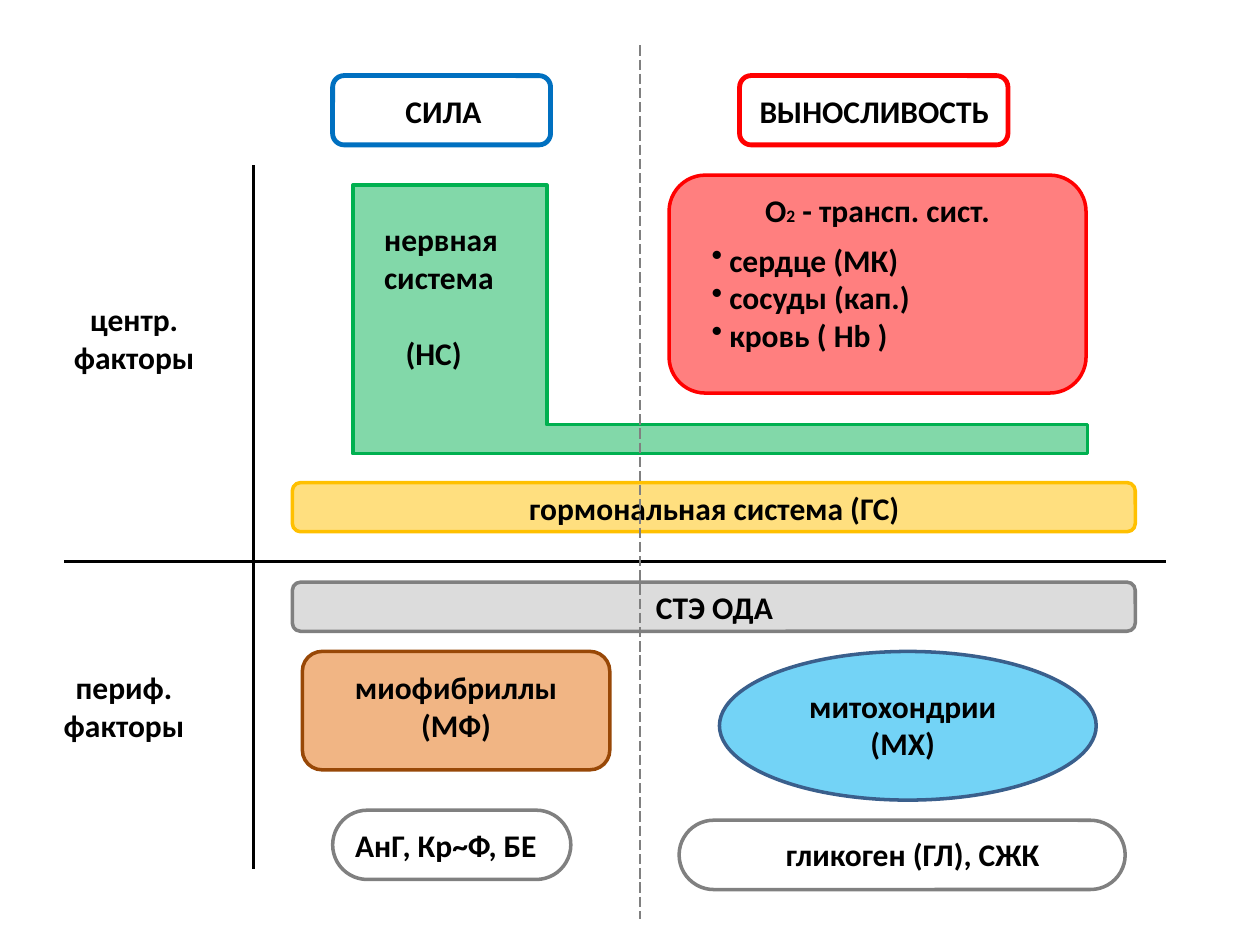
from dataclasses import dataclass

from lxml import etree
from pptx import Presentation
from pptx.dml.color import RGBColor
from pptx.enum.dml import MSO_LINE
from pptx.enum.shapes import MSO_CONNECTOR, MSO_SHAPE
from pptx.enum.text import MSO_AUTO_SIZE, PP_ALIGN
from pptx.oxml.ns import qn
from pptx.util import Inches, Pt

ROUNDED = MSO_SHAPE.ROUNDED_RECTANGLE
OVAL = MSO_SHAPE.OVAL
STRAIGHT = MSO_CONNECTOR.STRAIGHT
LEFT, CENTER = PP_ALIGN.LEFT, PP_ALIGN.CENTER
LONG_DASH = MSO_LINE.LONG_DASH
FIT_TEXT = MSO_AUTO_SIZE.SHAPE_TO_FIT_TEXT

COLUMNS, ROWS = 100, 75
WIDTH, HEIGHT = Inches(10), Inches(7.5)


@dataclass(frozen=True)
class Theme:
    font: str = "Calibri"
    body: float = 18
    subscript: float = 10
    line_height: float = 22
    heading_line: float = 2.75
    outline: float = 2
    axis: float = 1.75
    divider: float = 0.75
    black: str = "000000"
    blue: str = "0070C0"
    red: str = "FF0000"
    green: str = "00B050"
    amber: str = "FFC000"
    silver: str = "BFBFBF"
    gray: str = "808080"
    orange: str = "E46C0A"
    brown: str = "984807"
    sky: str = "00B0F0"
    navy: str = "3A5F8C"


class SlideBuilder:
    """Draws on one slide; lengths are columns and rows of the grid."""

    def __init__(self, page, theme):
        self.page = page
        self.theme = theme

    def x(self, columns):
        return round(WIDTH * columns / COLUMNS)

    def y(self, rows):
        return round(HEIGHT * rows / ROWS)

    def area(self, left, top, width, height):
        return self.x(left), self.y(top), self.x(width), self.y(height)

    def shape(self, kind, at, outline, weight=None, fill=None, alpha=50, adjust=()):
        shape = self.page.shapes.add_shape(kind, *self.area(*at))
        for index, value in enumerate(adjust):
            shape.adjustments[index] = value
        self.paint(shape, outline, weight, fill, alpha)

    def corner(self, at, post, foot, outline, fill, alpha):
        """An L outline: post is the upright's width, foot the base's height."""
        left, top, width, height = at
        right, bottom = left + width, top + height
        points = [(left + post, top), (left + post, bottom - foot),
                  (right, bottom - foot), (right, bottom), (left, bottom)]
        outliner = self.page.shapes.build_freeform(self.x(left), self.y(top))
        outliner.add_line_segments([(self.x(x), self.y(y)) for x, y in points])
        self.paint(outliner.convert_to_shape(), outline, None, fill, alpha)

    def paint(self, shape, outline, weight, fill, alpha):
        shape.shadow.inherit = False
        shape.line.color.rgb = RGBColor.from_string(outline)
        shape.line.width = Pt(weight or self.theme.outline)
        if fill is None:
            shape.fill.background()
            return
        shape.fill.solid()
        shape.fill.fore_color.rgb = RGBColor.from_string(fill)
        color = shape._element.spPr.find(qn("a:solidFill"))[0]
        etree.SubElement(color, qn("a:alpha"), val=str(alpha * 1000))

    def line(self, start, end, color, weight, dash=None):
        line = self.page.shapes.add_connector(
            STRAIGHT, self.x(start[0]), self.y(start[1]), self.x(end[0]), self.y(end[1]))
        line.line.color.rgb = RGBColor.from_string(color)
        line.line.width = Pt(weight)
        if dash is not None:
            line.line.dash_style = dash
        etree.SubElement(line._element.spPr, qn("a:effectLst"))

    def text(self, at, *lines, align=CENTER, indent=0, bullet=False):
        """Each line is a string or a list of (text, size) spans."""
        box = self.page.shapes.add_textbox(*self.area(*at))
        frame = box.text_frame
        frame.word_wrap = True
        frame.auto_size = FIT_TEXT
        for index, line in enumerate(lines):
            para = frame.paragraphs[0] if index == 0 else frame.add_paragraph()
            para.alignment = align
            para.font.name = self.theme.font
            para.font.bold = True
            para.font.size = Pt(self.theme.body)
            para.font.color.rgb = RGBColor.from_string(self.theme.black)
            spans = [(line, None)] if isinstance(line, str) else line
            for words, size in spans:
                span = para.add_run()
                span.text = words
                if size:
                    span.font.size = Pt(size)
            if indent:
                self.indent(para, indent, bullet)
        return frame

    def indent(self, para, columns, bullet=False):
        properties = para._p.get_or_add_pPr()
        properties.set("marL", str(self.x(columns)))
        if bullet:
            properties.set("indent", str(-self.x(columns)))
            mark = etree.Element(qn("a:buChar"), char="•")
            properties.find(qn("a:defRPr")).addprevious(mark)


def main():
    deck = Presentation()
    deck.slide_width, deck.slide_height = WIDTH, HEIGHT
    theme = Theme()
    draw = SlideBuilder(deck.slides.add_slide(deck.slide_layouts[6]), theme)

    # Column headings
    draw.shape(ROUNDED, (26.4, 6, 17.3, 5.5), theme.blue, theme.heading_line)
    draw.shape(ROUNDED, (58.7, 6, 21.3, 5.5), theme.red, theme.heading_line)
    draw.text((58.7, 6.8, 22.8, 4), "ВЫНОСЛИВОСТЬ", align=LEFT, indent=0.6)
    draw.text((29.5, 6.8, 15.7, 4), "СИЛА", align=LEFT, indent=1.7)

    # Axes and row labels
    draw.line((20.1, 13.1), (20.1, 69), theme.black, theme.axis)
    draw.line((5.1, 44.6), (92.5, 44.6), theme.black, theme.axis)
    draw.text((2, 23.3, 17.3, 7.1), "центр. факторы")
    draw.text((0, 52.5, 19.7, 7.1), "периф.", "факторы")

    # Central factors: hormonal and nervous systems
    draw.shape(ROUNDED, (23.2, 38.3, 66.9, 3.9), theme.amber, fill=theme.amber)
    draw.text((24, 38.3, 65.4, 4), "гормональная система (ГС)")
    draw.corner((28, 14.7, 58.3, 21.3), 15.4, 2.3, theme.green, theme.green, 49)
    nervous = draw.text((29.5, 17, 18.1, 13.1), "нервная система", "(НС)", align=LEFT)
    abbreviation = nervous.paragraphs[1]
    abbreviation.space_before = Pt(theme.line_height)
    draw.indent(abbreviation, 1.7)

    # Central factors: oxygen transport
    draw.shape(ROUNDED, (53.1, 13.9, 33.1, 17.3), theme.red, fill=theme.red)
    draw.text((54.7, 14.7, 29.9, 4),
              [("О", None), ("2", theme.subscript), (" - трансп. сист.", None)])
    draw.text((55.5, 18.6, 28.3, 10.1), "сердце (МК)", "сосуды (кап.)", "кровь ( Hb )",
              align=LEFT, indent=1.4, bullet=True)

    # Peripheral factors, with the divider between the two columns
    draw.shape(ROUNDED, (23.2, 46.2, 66.9, 3.9), theme.gray, fill=theme.silver, alpha=54)
    draw.text((24.8, 46.2, 63.8, 4), "СТЭ ОДА")
    draw.shape(ROUNDED, (24, 51.7, 24.4, 9.4), theme.brown, fill=theme.orange)
    draw.line((50.8, 3.6), (50.8, 72.9), theme.gray, theme.divider, LONG_DASH)
    draw.shape(OVAL, (57.1, 51.7, 29.9, 11.8), theme.navy, fill=theme.sky, alpha=55)
    draw.text((24.8, 52.5, 22.8, 7.1), "миофибриллы", "(МФ)")
    draw.text((61, 54, 21.3, 7.1), "митохондрии", "(МХ)")

    # Energy sources
    for at in ((26.4, 64.3, 18.9, 5.5), (53.9, 65.1, 35.4, 5.5)):
        draw.shape(ROUNDED, at, theme.gray, adjust=(0.5,))
    draw.text((57.1, 65.8, 30.7, 4), "гликоген (ГЛ), СЖК")
    draw.text((27.2, 65.1, 17.3, 4), "АнГ, Кр~Ф, БЕ", align=LEFT)

    deck.save("out.pptx")


if __name__ == "__main__":
    main()
